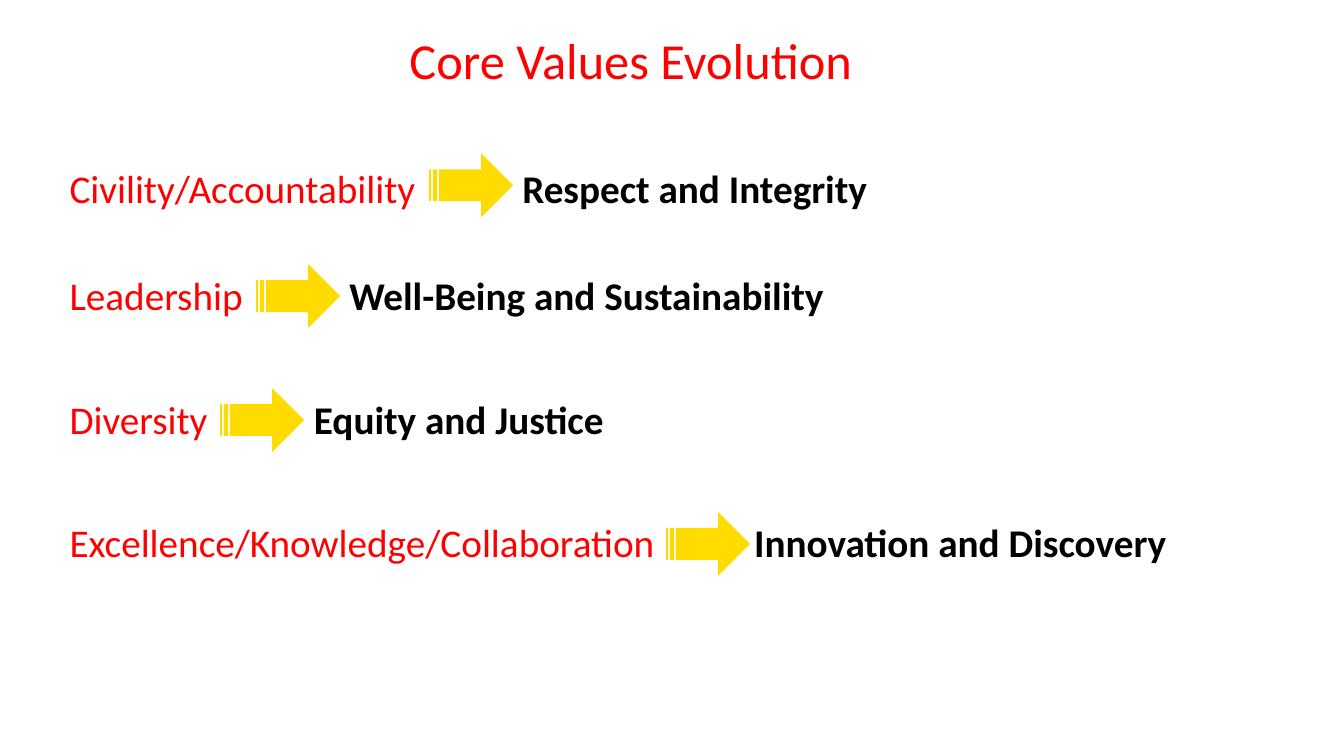
import pptx
import pptx.util
import pptx.dml.color
import pptx.enum.shapes
import pptx.enum.text
import pptx.oxml.ns
import lxml.etree

RED = pptx.dml.color.RGBColor(0xFF, 0x00, 0x00)
BLACK = pptx.dml.color.RGBColor(0x00, 0x00, 0x00)
GOLD = pptx.dml.color.RGBColor(0xFF, 0xDB, 0x00)
COLS, ROWS = 160, 90
LEFT, WIDTH, HIGH = 7.1, 138, 13.3
INSET = 1.2

VALUES = [
    ("Civility/Accountability", "Respect and Integrity", 14.3, 51.1, 18.25, 62.2),
    ("Leadership", "Well-Being and Sustainability", 27.1, 30.5, 31.45, 41.6),
    ("Diversity", "Equity and Justice", 41.8, 26.2, 46.2, 37.4),
    ("Excellence/Knowledge/Collaboration", "Innovation and Discovery", 56.5, 79.3, 60.95, 89.8),
]


class Deck:
    font = "Calibri"

    def __init__(self):
        self.show = pptx.Presentation()
        self.show.slide_width = pptx.util.Inches(13.33)
        self.show.slide_height = pptx.util.Inches(7.5)
        self.slide = self.show.slides.add_slide(self.show.slide_layouts[6])

    def col(self, count):
        return round(self.show.slide_width * count / COLS)

    def row(self, count):
        return round(self.show.slide_height * count / ROWS)

    def area(self, left, top, width, height):
        return self.col(left), self.row(top), self.col(width), self.row(height)

    def box(self, area, text, anchor):
        frame = self.slide.shapes.add_textbox(*self.area(*area)).text_frame
        frame.word_wrap = True
        frame.vertical_anchor = anchor
        frame.text = text
        return frame.paragraphs[0]

    def style(self, run, size, color, bold=False):
        run.font.name = self.font
        run.font.size = pptx.util.Pt(size)
        run.font.color.rgb = color
        run.font.bold = bold

    def title(self, text):
        para = self.box((15.1, 1.7, 120, 9.6), text, pptx.enum.text.MSO_ANCHOR.BOTTOM)
        para.alignment = pptx.enum.text.PP_ALIGN.CENTER
        para.line_spacing = 0.9
        self.style(para.runs[0], 36, RED)

    def change(self, old, new, top, stop):
        para = self.box((LEFT, top, WIDTH, HIGH), old + "\t", pptx.enum.text.MSO_ANCHOR.MIDDLE)
        para.line_spacing = 1.5
        props = para._p.get_or_add_pPr()
        tabs = lxml.etree.SubElement(props, pptx.oxml.ns.qn("a:tabLst"))
        place = str(self.col(stop - LEFT - INSET))
        lxml.etree.SubElement(tabs, pptx.oxml.ns.qn("a:tab"), pos=place, algn="l")
        self.style(para.runs[0], 28, RED)
        run = para.add_run()
        run.text = new
        self.style(run, 28, BLACK, True)

    def arrow(self, left, top):
        kind = pptx.enum.shapes.MSO_SHAPE.STRIPED_RIGHT_ARROW
        shape = self.slide.shapes.add_shape(kind, *self.area(left, top, 10, 7.6))
        shape.shadow.inherit = False
        shape.fill.solid()
        shape.fill.fore_color.rgb = GOLD
        shape.line.fill.background()


def main():
    deck = Deck()
    for old, new, top, left, head, stop in VALUES:
        deck.change(old, new, top, stop)
        deck.arrow(left, head)
    deck.title("Core Values Evolution")
    deck.show.save("out.pptx")


if __name__ == "__main__":
    main()
